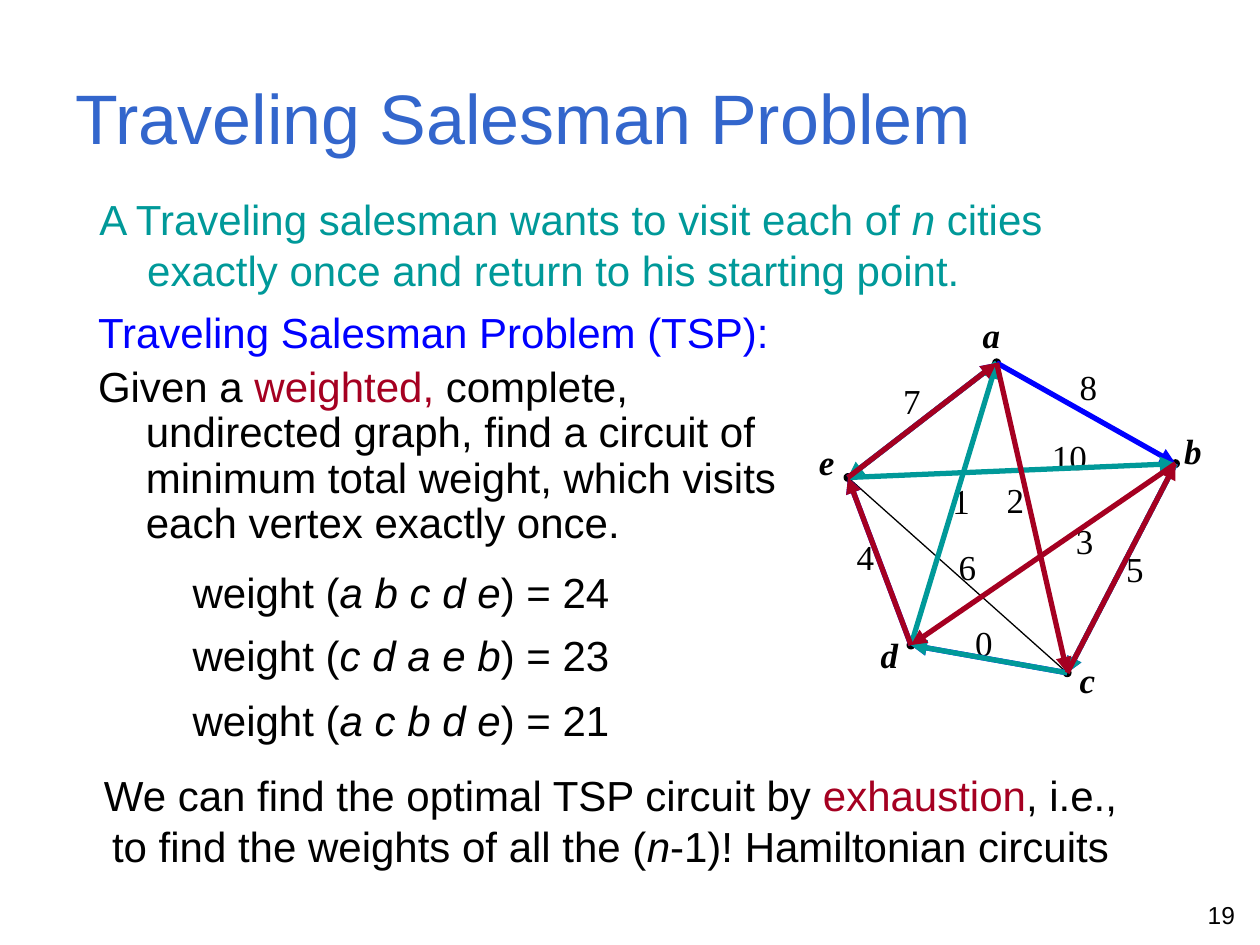
from itertools import combinations

from lxml import etree
from pptx import Presentation
from pptx.dml.color import RGBColor
from pptx.enum.shapes import MSO_CONNECTOR, MSO_SHAPE
from pptx.enum.text import MSO_ANCHOR as Anchor, PP_ALIGN as Align
from pptx.oxml.ns import qn
from pptx.util import Inches, Pt

COLORS = {"title": "3366CC", "teal": "009999", "blue": "0000FF",
          "red": "A50021", "black": "000000"}

# Graph positions, relative to the graph's box
VERTICES = {"a": (1.51, 0.44), "b": (2.93, 1.24), "c": (2.07, 2.9),
            "d": (0.83, 2.68), "e": (0.33, 1.35)}
VERTEX_LABELS = {"a": (1.3, 0), "b": (2.9, 0.92), "c": (2.07, 2.74),
                 "d": (0.49, 2.54), "e": (0, 1.01)}
WEIGHT_LABELS = {"7": (0.67, 0.52), "1": (1.06, 1.32), "2": (1.49, 1.31),
                 "10": (1.85, 0.97), "8": (2.07, 0.41), "3": (2.04, 1.63),
                 "5": (2.44, 1.86), "6": (1.11, 1.84), "0": (1.24, 2.44),
                 "4": (0.3, 1.76)}
TOURS = [("abcde", "blue"), ("cdaeb", "teal"), ("acbde", "red")]


def rgb(name):
    return RGBColor.from_string(COLORS[name])


def add_text(page, box, paras, size=24, font="Arial", color="black", bold=False,
             align=None, anchor=Anchor.TOP, wrap=True, hanging=False, line_spacing=None):
    """Each paragraph is a list of (text, color or None, italic) runs."""
    frame = page.shapes.add_textbox(*map(Inches, box)).text_frame
    frame.word_wrap = wrap
    frame.vertical_anchor = anchor
    for index, spans in enumerate(paras):
        para = frame.paragraphs[0] if index == 0 else frame.add_paragraph()
        para.font.size, para.font.name, para.font.bold = Pt(size), font, bold
        para.font.color.rgb = rgb(color)
        para.alignment = align
        para.line_spacing = line_spacing
        if hanging:
            para.space_before = Pt(size * 0.2)
            props = para._p.get_or_add_pPr()
            props.set("marL", str(Inches(0.38)))
            props.set("indent", str(Inches(-0.38)))
        for text, tint, italic in spans:
            span = para.add_run()
            span.text = text
            if italic:
                span.font.italic = True
            if tint:
                span.font.color.rgb = rgb(tint)


def add_edge(page, start, end, color="black", width=0.75, arrow=False):
    edge = page.shapes.add_connector(MSO_CONNECTOR.STRAIGHT, *map(Inches, start + end))
    edge.line.color.rgb = rgb(color)
    edge.line.width = Pt(width)
    if arrow:
        etree.SubElement(edge.line._get_or_add_ln(), qn("a:tailEnd"), type="triangle")
    etree.SubElement(edge._element.spPr, qn("a:effectLst"))


def add_heading(page, left, top):
    add_text(page, (left, top, 9, 1.25), [[("Traveling Salesman Problem", None, False)]],
             size=40, color="title", anchor=Anchor.MIDDLE)
    add_text(page, (left + 0.19, top + 1.19, 8.22, 0.96),
             [[("A Traveling salesman wants to visit each of ", None, False),
               ("n", None, True),
               (" cities exactly once and return to his starting point.", None, False)]],
             color="teal", hanging=True)


def add_problem(page, left, top):
    add_text(page, (left, top, 5.67, 2.08), [
        [("Traveling Salesman Problem (TSP):", "blue", False)],
        [("Given a ", None, False), ("weighted,", "red", False),
         (" complete, undirected graph, find a circuit of minimum total weight, "
          "which visits each vertex exactly once.", None, False)],
    ], hanging=True, line_spacing=0.9)
    # Weights of the three circuits
    circuits = [("a b c d e", 24, 2.06), ("c d a e b", 23, 2.56), ("a c b d e", 21, 3.08)]
    for circuit, weight, offset in circuits:
        add_text(page, (left + 0.75, top + offset, 3.88, 0.45),
                 [[("weight (", None, False), (circuit, None, True),
                   (f") = {weight}", None, False)]], hanging=True, line_spacing=0.9)


def add_graph(page, left, top):
    points = {name: (left + x, top + y) for name, (x, y) in VERTICES.items()}
    # Vertices and the complete graph
    for x, y in points.values():
        dot = page.shapes.add_shape(MSO_SHAPE.OVAL, *map(Inches, (x - 0.03, y - 0.03, 0.06, 0.06)))
        dot.shadow.inherit = False
        dot.fill.solid()
        dot.fill.fore_color.rgb = dot.line.color.rgb = rgb("black")
        dot.line.width = Pt(0.75)
    for first, second in combinations(points, 2):
        add_edge(page, points[first], points[second])
    # Weights, then vertex names
    for labels, is_name in ((WEIGHT_LABELS, False), (VERTEX_LABELS, True)):
        for label, (x, y) in labels.items():
            width = 0.2 + 0.14 * len(label)
            add_text(page, (left + x, top + y, width, 0.43), [[(label, None, is_name)]],
                     size=20, font="Times New Roman", bold=is_name, wrap=False)
    # Circuits
    for tour, color in TOURS:
        for start, end in zip(tour, tour[1:] + tour[0]):
            add_edge(page, points[start], points[end], color, 3, arrow=True)


def add_conclusion(page, left, top):
    add_text(page, (left, top, 8.45, 0.9),
             [[("We can find the optimal TSP circuit by", None, False),
               (" exhaustion", "red", False),
               (", i.e., to find the weights of all the (", None, False),
               ("n", None, True), ("-1)! Hamiltonian circuits", None, False)]],
             align=Align.CENTER)


def add_page_number(page, left, top):
    add_text(page, (left, top, 2.33, 0.31), [[("19", None, False)]], size=14, align=Align.RIGHT)


def main():
    deck = Presentation()
    deck.slide_width, deck.slide_height = Inches(10), Inches(7.5)
    page = deck.slides.add_slide(deck.slide_layouts[6])
    add_page_number(page, 7.57, 7.09)
    add_heading(page, 0.5, 0.3)
    add_problem(page, 0.68, 2.43)
    add_graph(page, 6.4, 2.44)
    add_conclusion(page, 0.62, 6.06)
    deck.save("out.pptx")


if __name__ == "__main__":
    main()
